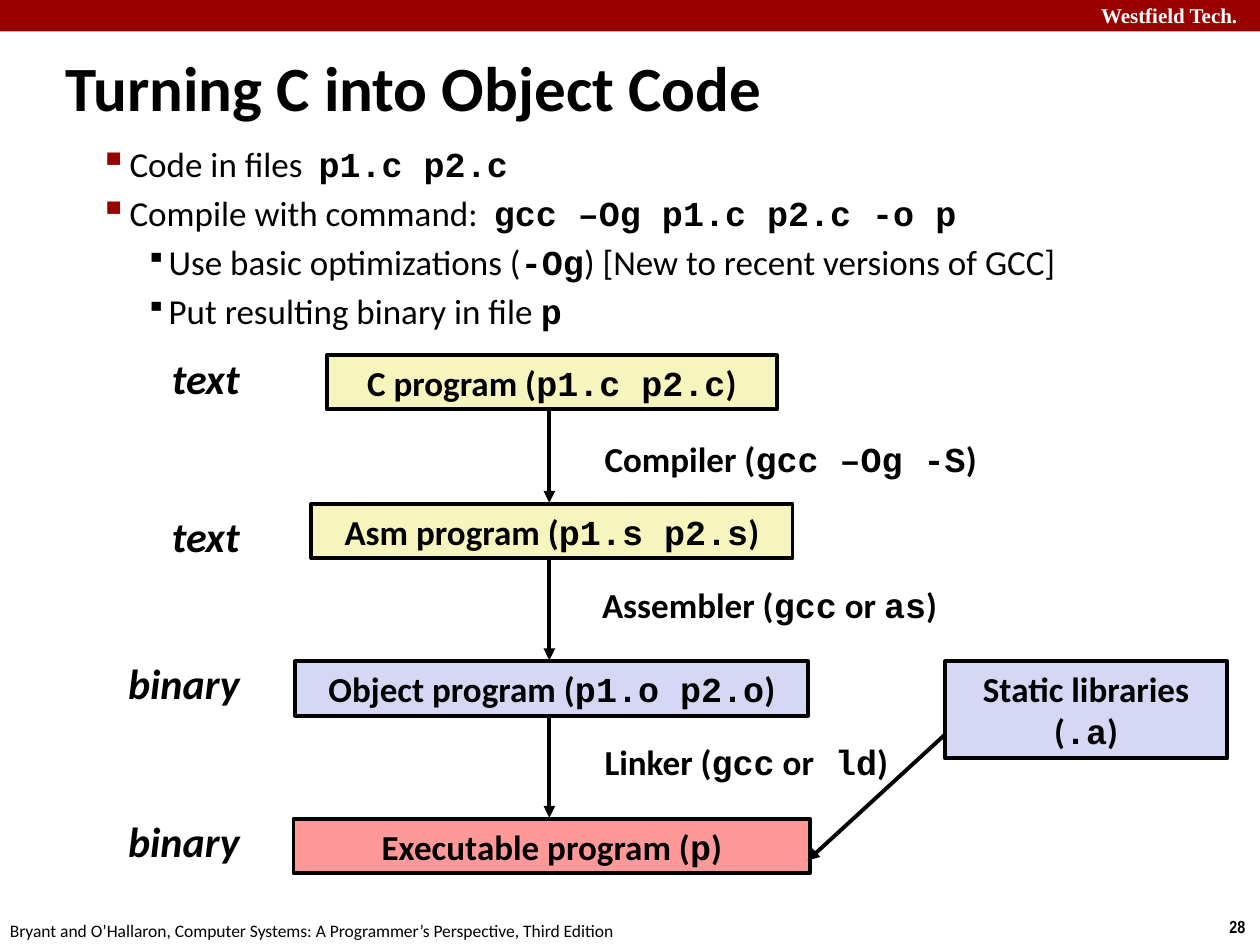
from dataclasses import dataclass
from lxml.etree import SubElement
from pptx import Presentation
from pptx.dml.color import RGBColor
from pptx.enum.shapes import MSO_CONNECTOR, MSO_SHAPE
from pptx.enum.text import MSO_ANCHOR, PP_ALIGN
from pptx.oxml.ns import qn
from pptx.util import Inches, Pt


@dataclass(frozen=True)
class Theme:
    """Colours, fonts and type sizes of the slide."""
    ink: str = "000000"
    paper: str = "FFFFFF"
    red: str = "990000"
    cream: str = "F6F5BD"
    lilac: str = "D6D6F5"
    rose: str = "FF9999"
    sans: str = "Calibri"
    mono: str = "Courier New"
    serif: str = "Times New Roman"
    narrow: str = "Arial Narrow"
    title: int = 36
    label: int = 24
    text: int = 20
    brand: int = 12
    foot: int = 10
    rule: float = 2.25


THEME = Theme()


def apply(item, values):
    """Set each attribute in values on item."""
    for name, value in values.items():
        setattr(item, name, value)


def write(para, text, size=THEME.text, color=THEME.ink, font=THEME.sans,
          bold=True, italic=False):
    """Fill a paragraph, with the parts between backticks in bold code type."""
    for index, part in enumerate(text.split("`")):
        code = index % 2 == 1
        run = para.add_run()
        run.text = part
        apply(run.font, {"name": THEME.mono if code else font, "size": Pt(size),
                         "bold": bold or code, "italic": italic})
        run.font.color.rgb = RGBColor.from_string(color)


def add_text(slide, area, text, align=PP_ALIGN.LEFT, anchor=MSO_ANCHOR.TOP,
             wrap=True, **style):
    """Add a text box with one paragraph."""
    frame = slide.shapes.add_textbox(*map(Inches, area)).text_frame
    apply(frame, {"word_wrap": wrap, "vertical_anchor": anchor})
    para = frame.paragraphs[0]
    para.alignment = align
    write(para, text, **style)


def add_box(slide, area, fill, text="", border=True):
    """Add a filled box with centred text."""
    box = slide.shapes.add_shape(MSO_SHAPE.RECTANGLE, *map(Inches, area))
    box.shadow.inherit = False
    box.fill.solid()
    box.fill.fore_color.rgb = RGBColor.from_string(fill)
    if border:
        ink_line(box.line)
    else:
        box.line.fill.background()
    if text:
        apply(box.text_frame, {"word_wrap": True, "vertical_anchor": MSO_ANCHOR.TOP})
        para = box.text_frame.paragraphs[0]
        para.alignment = PP_ALIGN.CENTER
        write(para, text)


def ink_line(line):
    """Give a line the theme colour and width."""
    line.color.rgb = RGBColor.from_string(THEME.ink)
    line.width = Pt(THEME.rule)


def add_arrow(slide, start, end):
    """Add a straight arrow from start to end."""
    arrow = slide.shapes.add_connector(
        MSO_CONNECTOR.STRAIGHT, *map(Inches, (*start, *end)))
    ink_line(arrow.line)
    props = arrow._element.spPr
    SubElement(props.find(qn("a:ln")), qn("a:tailEnd"), type="triangle")
    SubElement(props, qn("a:effectLst"))


def add_list(slide, area, items):
    """Add a two-level list with square bullets."""
    levels = {1: (0.61, -0.24, THEME.red, 110), 2: (0.92, -0.18, THEME.ink, 80)}
    frame = slide.shapes.add_textbox(*map(Inches, area)).text_frame
    frame.word_wrap = True
    for index, (level, text) in enumerate(items):
        para = frame.add_paragraph() if index else frame.paragraphs[0]
        margin, indent, color, scale = levels[level]
        apply(para, {"level": level, "space_before": Pt(THEME.text * 0.2)})
        props = para._p.get_or_add_pPr()
        props.set("marL", str(Inches(margin)))
        props.set("indent", str(Inches(indent)))
        SubElement(SubElement(props, qn("a:buClr")), qn("a:srgbClr"), val=color)
        SubElement(props, qn("a:buSzPct"), val=str(scale * 1000))
        SubElement(props, qn("a:buChar"), char="▪")
        write(para, text, bold=False)


def add_frame(slide):
    """Add the top band, the title and the footer."""
    add_box(slide, (0, 0, 10, 0.25), THEME.red, border=False)
    add_text(slide, (8.64, -0.03, 1.43, 0.3), "Westfield Tech.",
             size=THEME.brand, color=THEME.paper, font=THEME.serif)
    add_text(slide, (9.66, 7.22, 0.34, 0.27), "28", wrap=False,
             size=THEME.foot, font=THEME.narrow)
    add_text(slide, (-0.02, 7.25, 5.08, 0.27),
             "Bryant and O’Hallaron, Computer Systems: "
             "A Programmer’s Perspective, Third Edition",
             wrap=False, size=THEME.foot, bold=False)
    add_text(slide, (0.42, 0.37, 7.65, 0.63), "Turning C into Object Code",
             anchor=MSO_ANCHOR.MIDDLE, size=THEME.title)


def add_flow(slide):
    """Add the stages from source to binary, with the tools between them."""
    mid, axis, high = 4.38, 4.36, 0.43
    stages = [
        (2.82, 3.57, THEME.cream, "C program (`p1.c p2.c`)", "text", 2.75),
        (4, 3.82, THEME.cream, "Asm program (`p1.s p2.s`)", "text", 4),
        (5.25, 4.07, THEME.lilac, "Object program (`p1.o p2.o`)", "binary", 5.17),
        (6.5, 4.1, THEME.rose, "Executable program (`p`)", "binary", 6.42),
    ]
    tools = [
        (4.7, 3.42, "Compiler (`gcc –Og -S`)"),
        (4.68, 4.58, "Assembler (`gcc` or `as`)"),
        (4.7, 5.83, "Linker (`gcc` or` ld`)"),
    ]
    for top, wide, fill, text, kind, side in stages:
        add_box(slide, (mid - wide / 2, top, wide, high), fill, text)
        add_text(slide, (0.9, side, 1.1, 0.5), kind, align=PP_ALIGN.RIGHT,
                 size=THEME.label, italic=True)
    for upper, lower in zip(stages, stages[1:]):
        add_arrow(slide, (axis, upper[0] + high), (axis, lower[0] - 0.01))
    for left, top, text in tools:
        add_text(slide, (left, top, 3.33, high), text)
    add_box(slide, (7.5, 5.25, 2.24, 0.77), THEME.lilac, "Static libraries (`.a`)")
    add_arrow(slide, (7.5, 5.83), (6.41, 6.83))


def main():
    """Build and save the slide."""
    deck = Presentation()
    apply(deck, {"slide_width": Inches(10), "slide_height": Inches(7.5)})
    slide = deck.slides.add_slide(deck.slide_layouts[6])
    add_frame(slide)
    add_list(slide, (0.32, 1.08, 9.09, 1.6), [
        (1, "Code in files  `p1.c p2.c`"),
        (1, "Compile with command:  `gcc –Og p1.c p2.c -o p`"),
        (2, "Use basic optimizations (`-Og`) [New to recent versions of GCC]"),
        (2, "Put resulting binary in file `p`"),
    ])
    add_flow(slide)
    deck.save("out.pptx")


if __name__ == "__main__":
    main()
